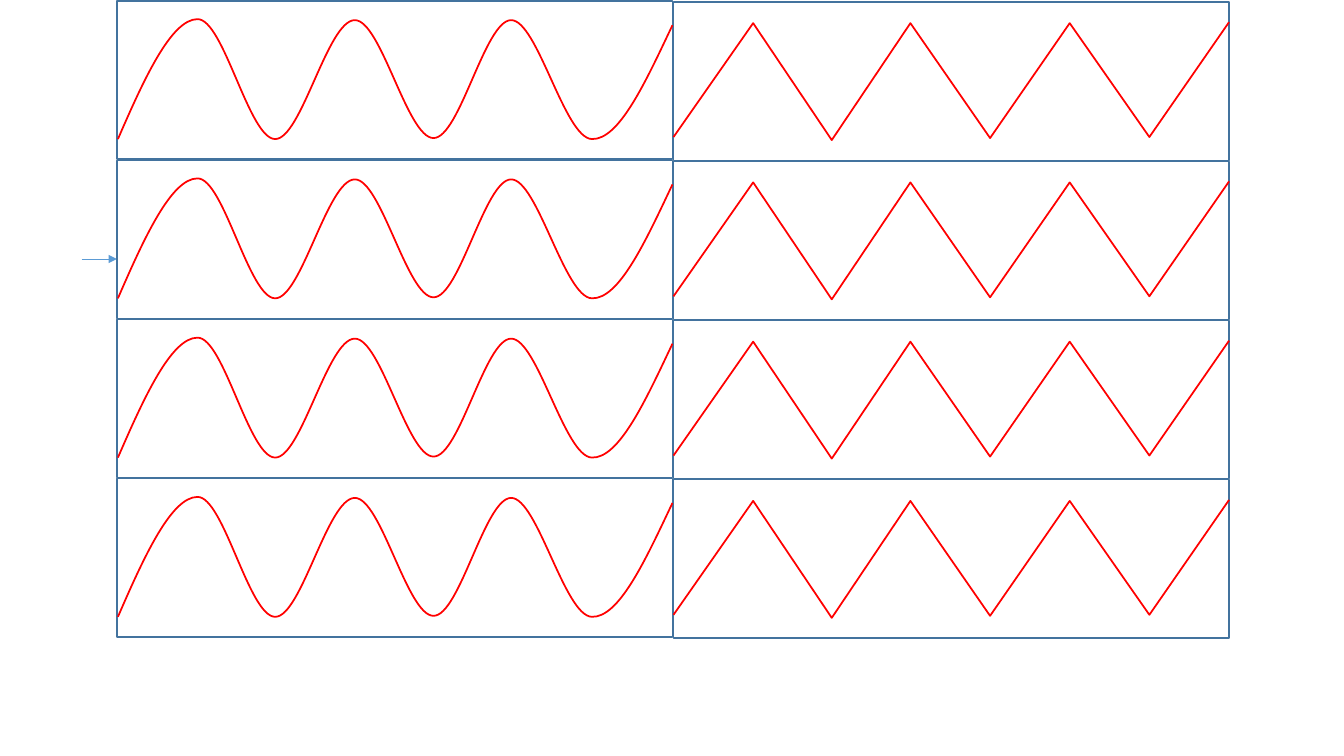
from lxml import etree
from pptx import Presentation
from pptx import util as u
from pptx.dml.color import RGBColor
from pptx.enum import shapes
from pptx.oxml.ns import qn

COLORS = {"arrow": "5B9BD5", "frame": "43739E", "wave": "FF0000"}
ROWS = 4
ROW_PITCH = 1.58
PANEL_WIDTH, PANEL_HEIGHT = 5.51, 1.57
SINE_LEFT, SINE_TOP = 1.16, 0.01
TRIANGLE_LEFT, TRIANGLE_TOP = 6.68, 0.02

SINE = [
    (0.01, 1.37),
    (0.27, 0.77), (0.54, 0.18), (0.80, 0.18),
    (1.06, 0.18), (1.31, 1.37), (1.57, 1.37),
    (1.83, 1.37), (2.09, 0.19), (2.36, 0.19),
    (2.62, 0.19), (2.88, 1.36), (3.14, 1.36),
    (3.40, 1.36), (3.65, 0.19), (3.91, 0.19),
    (4.17, 0.19), (4.44, 1.36), (4.71, 1.37),
    (4.98, 1.38), (5.24, 0.81), (5.51, 0.24),
]
TRIANGLE = [
    (0, 1.34), (0.79, 0.21), (1.57, 1.37), (2.35, 0.21),
    (3.14, 1.35), (3.93, 0.21), (4.72, 1.34), (5.51, 0.2),
]


class WaveSlide:
    def __init__(self, slide, colors):
        self.slide = slide
        self.colors = colors

    def stroke(self, line, color, width):
        line.color.rgb = RGBColor.from_string(self.colors[color])
        line.width = u.Pt(width)

    def arrow(self, start, end):
        pointer = self.slide.shapes.add_connector(
            shapes.MSO_CONNECTOR.STRAIGHT, *map(u.Inches, start + end))
        self.stroke(pointer.line, "arrow", 0.5)
        properties = pointer.element.spPr
        etree.SubElement(properties.find(qn("a:ln")), qn("a:tailEnd"), type="triangle")
        etree.SubElement(properties, qn("a:effectLst"))

    def frame(self, panel, left, top):
        border = panel.shapes.add_shape(
            shapes.MSO_SHAPE.RECTANGLE,
            *map(u.Inches, (left, top, PANEL_WIDTH, PANEL_HEIGHT)))
        border.shadow.inherit = False
        border.fill.background()
        self.stroke(border.line, "frame", 1)

    def wave(self, panel, left, top, points, curved):
        start, *rest = [(u.Inches(left + x), u.Inches(top + y)) for x, y in points]
        builder = panel.shapes.build_freeform(*start)
        builder.add_line_segments(rest, close=False)
        trace = builder.convert_to_shape()
        trace.shadow.inherit = False
        trace.fill.background()
        self.stroke(trace.line, "wave", 1.25)
        if curved:
            self.bend(trace)

    def bend(self, trace):
        outline = trace.element.find(".//" + qn("a:path"))
        segments = outline.findall(qn("a:lnTo"))
        for first in range(0, len(segments), 3):
            curve = etree.SubElement(outline, qn("a:cubicBezTo"))
            for segment in segments[first:first + 3]:
                curve.append(segment[0])
                outline.remove(segment)

    def panel(self, left, top, points, curved=False):
        group = self.slide.shapes.add_group_shape()
        self.frame(group, left, top)
        self.wave(group, left, top, points, curved)


def main():
    deck = Presentation()
    deck.slide_width, deck.slide_height = u.Inches(13.33), u.Inches(7.5)
    page = WaveSlide(deck.slides.add_slide(deck.slide_layouts[6]), COLORS)
    page.arrow((0.81, 2.57), (1.16, 2.57))
    for row in range(ROWS):
        offset = row * ROW_PITCH
        page.panel(SINE_LEFT, SINE_TOP + offset, SINE, curved=True)
        page.panel(TRIANGLE_LEFT, TRIANGLE_TOP + offset, TRIANGLE)
    deck.save("out.pptx")


if __name__ == "__main__":
    main()
